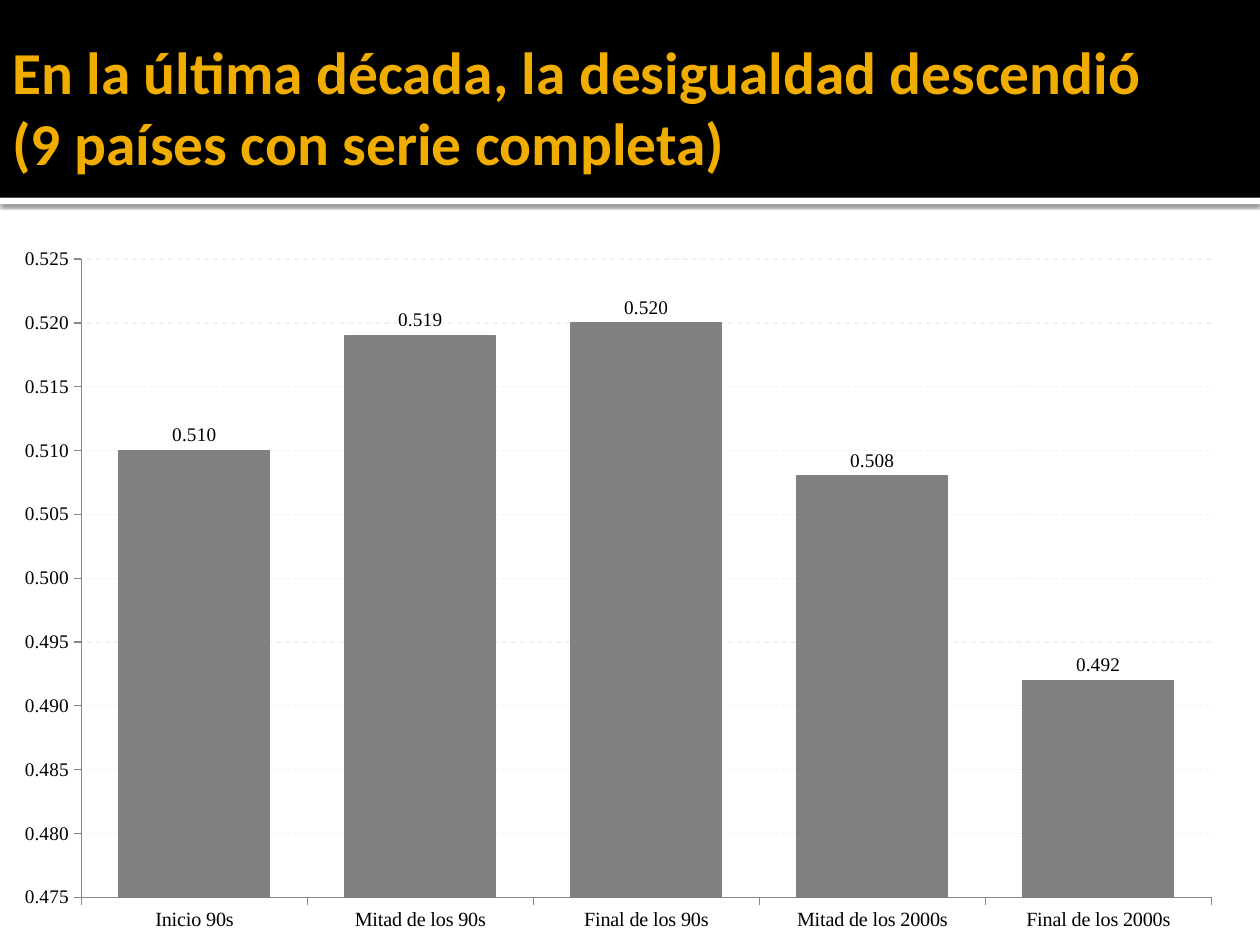
from lxml import etree
from pptx import Presentation
from pptx.chart.data import CategoryChartData
from pptx.dml.color import RGBColor
from pptx.enum.chart import XL_CHART_TYPE as ChartType, XL_LABEL_POSITION as LabelPos
from pptx.enum.chart import XL_TICK_MARK as Tick
from pptx.enum.dml import MSO_LINE_DASH_STYLE as Dash
from pptx.enum.shapes import MSO_SHAPE as Shape
from pptx.enum.text import MSO_ANCHOR as Anchor
from pptx.oxml import parse_xml
from pptx.oxml.ns import nsdecls, qn
from pptx.util import Inches, Pt

COLORS = {"band": "000000", "paper": "FFFFFF", "title": "F0AD00", "text": "000000",
          "bar": "808080", "axis": "868686", "grid": "F2F2F2"}


def rgb(name):
    return RGBColor.from_string(COLORS[name])


class SlideBuilder:
    title_font = "Calibri"
    chart_font = "Times New Roman"

    def __init__(self, slide):
        self.slide = slide

    def box(self, left, top, width, height, color):
        rect = self.slide.shapes.add_shape(
            Shape.RECTANGLE, Inches(left), Inches(top), Inches(width), Inches(height))
        rect.shadow.inherit = False
        rect.fill.solid()
        rect.fill.fore_color.rgb = rgb(color)
        rect.line.fill.background()
        return rect

    def drop_shadow(self, rect):
        effects = rect._element.spPr.find(qn("a:effectLst"))
        effects.append(parse_xml(
            f'<a:outerShdw {nsdecls("a")} blurRad="{Pt(2.5)}" dist="{Pt(0.8)}" dir="5400000" '
            f'rotWithShape="0"><a:srgbClr val="{COLORS["band"]}"><a:alpha val="60000"/>'
            '</a:srgbClr></a:outerShdw>'))

    def title(self, left, top, width, height, lines):
        frame = self.slide.shapes.add_textbox(
            Inches(left), Inches(top), Inches(width), Inches(height)).text_frame
        frame.word_wrap = True
        frame.vertical_anchor = Anchor.MIDDLE
        frame.margin_left = Inches(0.1)
        frame.margin_top = frame.margin_right = frame.margin_bottom = Inches(0.05)
        heading = frame.paragraphs[0]
        heading.text = "\v".join(lines)
        heading.font.name, heading.font.size, heading.font.bold = self.title_font, Pt(34), True
        heading.font.color.rgb = rgb("title")

    def column_chart(self, left, top, width, height, values, low, high, step):
        data = CategoryChartData(number_format="0.000")
        data.categories = list(values)
        data.add_series("Series 1", list(values.values()))
        chart = self.slide.shapes.add_chart(
            ChartType.COLUMN_CLUSTERED, Inches(left), Inches(top),
            Inches(width), Inches(height), data).chart
        chart.has_legend = chart.has_title = False
        chart.font.name, chart.font.size = self.chart_font, Pt(11)
        chart.font.color.rgb = rgb("text")

        # Axes
        for axis in (chart.category_axis, chart.value_axis):
            axis.major_tick_mark, axis.minor_tick_mark = Tick.OUTSIDE, Tick.NONE
            axis.format.line.color.rgb = rgb("axis")
            axis.format.line.width = Pt(0.75)
        chart.category_axis.tick_labels.font.size = Pt(11.5)
        scale = chart.value_axis
        scale.minimum_scale, scale.maximum_scale, scale.major_unit = low, high, step
        scale.tick_labels.number_format = "0.000"
        scale.tick_labels.number_format_is_linked = False
        grid = scale.major_gridlines.format.line
        grid.color.rgb, grid.width, grid.dash_style = rgb("grid"), Pt(0.75), Dash.DASH

        # Columns and their labels
        plot = chart.plots[0]
        plot.gap_width, plot.vary_by_categories = 50, False
        columns = plot.series[0]
        columns.format.fill.solid()
        columns.format.fill.fore_color.rgb = rgb("bar")
        columns.format.line.color.rgb = rgb("bar")
        columns.format.line.width = Pt(0.75)
        labels = columns.data_labels
        labels.show_value, labels.position = True, LabelPos.OUTSIDE_END
        labels.number_format, labels.number_format_is_linked = "0.000", False
        return chart

    def plot_layout(self, chart, **fractions):
        area = chart._chartSpace.chart.plotArea
        for old in area.findall(qn("c:layout")):
            area.remove(old)
        layout = etree.Element(qn("c:layout"))
        manual = etree.SubElement(layout, qn("c:manualLayout"))
        settings = {"layoutTarget": "inner", "xMode": "edge", "yMode": "edge", **fractions}
        for key, value in settings.items():
            etree.SubElement(manual, qn(f"c:{key}")).set("val", str(value))
        area.insert(0, layout)


def main():
    deck = Presentation()
    deck.slide_width, deck.slide_height = Inches(10), Inches(7.5)
    builder = SlideBuilder(deck.slides.add_slide(deck.slide_layouts[6]))

    # Title band with a shadowed strip below it
    builder.drop_shadow(builder.box(0, 1.57, 10, 0.05, "paper"))
    builder.box(0, 0, 10, 1.57, "band")
    builder.title(0, 0.2, 10, 1.29, ["En la última década, la desigualdad descendió ",
                                     "(9 países con serie completa)"])

    # Inequality by period
    inequality = {"Inicio 90s": 0.510, "Mitad de los 90s": 0.519, "Final de los 90s": 0.520,
                  "Mitad de los 2000s": 0.508, "Final de los 2000s": 0.492}
    chart = builder.column_chart(0, 1.86, 9.8, 5.64, inequality, 0.475, 0.525, 0.005)
    builder.plot_layout(chart, x=0.066, y=0.035, w=0.915, h=0.898)

    deck.save("out.pptx")


if __name__ == "__main__":
    main()
